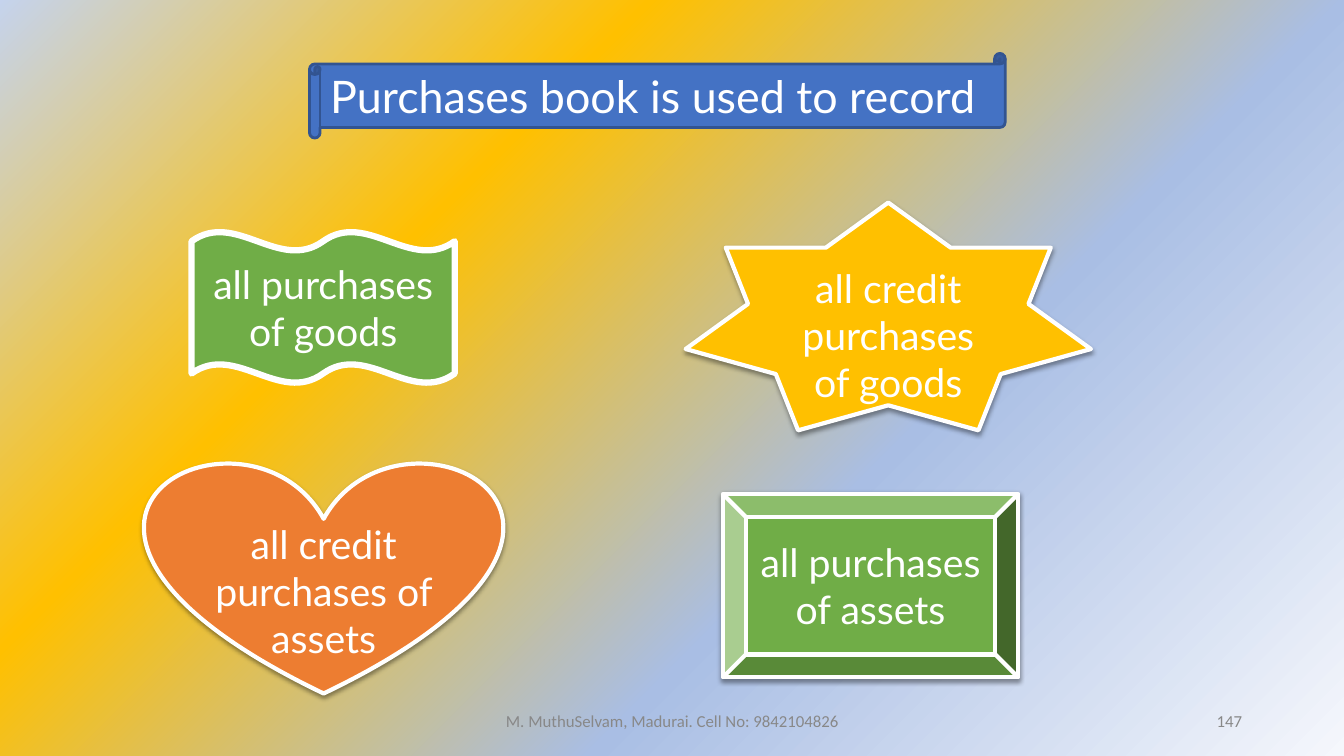
from pptx import Presentation
from pptx.dml.color import RGBColor
from pptx.enum.shapes import MSO_SHAPE as Kind
from pptx.enum.text import MSO_ANCHOR as Anchor, MSO_AUTO_SIZE as Fit, PP_ALIGN as Align
from pptx.oxml import parse_xml
from pptx.util import Inches, Pt

NS = 'xmlns:a="http://schemas.openxmlformats.org/drawingml/2006/main"'
WIDE, HIGH = 13.33, 7.5
WHITE, GREEN, GREY = "FFFFFF", "70AD47", "888888"
STOPS = [(0, "F5F7FC"), (36, "A9BEE4"), (69, "FFC000"), (100, "C5D3ED")]
LINE_GAP = 0.47  # height of one line of answer text

# kind, fill, outline width, shadow, lines the text is lowered by, box, words
ANSWERS = [
    (Kind.HEART, "ED7D31", 3, True, 1, (1.44, 4.57, 3.54, 2.31),
     "all credit purchases of assets"),
    (Kind.STAR_7_POINT, "FFC000", 3, True, 1, (6.8, 2.01, 4.02, 2.26),
     "all credit purchases of goods"),
    (Kind.BEVEL, GREEN, 3, True, 0, (7.17, 4.9, 2.93, 1.82),
     "all purchases of assets"),
    (Kind.DOUBLE_WAVE, GREEN, 4.5, False, 0, (1.9, 2.3, 2.61, 1.5),
     "all purchases of goods"),
]


def color(code):
    return RGBColor.from_string(code)


def write(shape, words, size, code, align, font="Lato"):
    frame = shape.text_frame
    frame.word_wrap = True
    frame.auto_size = Fit.NONE
    frame.vertical_anchor = Anchor.MIDDLE
    para = frame.paragraphs[0]
    para.alignment = align
    run = para.add_run()
    run.text = words
    run.font.size = Pt(size)
    run.font.name = font
    run.font.color.rgb = color(code)


def draw(slide, kind, box, fill, edge, width):
    shape = slide.shapes.add_shape(kind, *map(Inches, box))
    shape.shadow.inherit = False
    shape.fill.solid()
    shape.fill.fore_color.rgb = color(fill)
    shape.line.color.rgb = color(edge)
    shape.line.width = Pt(width)
    return shape


def shade(shape):
    """Give the shape a soft shadow below it."""
    effects = shape.shadow._element.find(
        "{http://schemas.openxmlformats.org/drawingml/2006/main}effectLst")
    effects.append(parse_xml(
        f'<a:outerShdw {NS} blurRad="40000" dist="20000" dir="5400000" rotWithShape="0">'
        '<a:srgbClr val="000000"><a:alpha val="38000"/></a:srgbClr></a:outerShdw>'))


def paint(slide):
    """Fill the background with a gradient out of the lower right corner."""
    fill = slide.background.fill
    fill.gradient()
    stops = "".join(f'<a:gs pos="{pos * 1000}"><a:srgbClr val="{code}"/></a:gs>'
                    for pos, code in STOPS)
    new = parse_xml(
        f'<a:gradFill {NS} rotWithShape="1"><a:gsLst>{stops}</a:gsLst>'
        '<a:path path="circle"><a:fillToRect l="100000" t="100000"/></a:path>'
        '<a:tileRect r="-100000" b="-100000"/></a:gradFill>')
    old = slide.background._cSld.bg.bgPr[0]
    old.getparent().replace(old, new)


def banner(slide, box):
    left, top, width, height = box
    scroll = draw(slide, Kind.HORIZONTAL_SCROLL, box, "4472C4", "325491", 2)
    title = slide.shapes.title
    roll = height / 8
    title.left, title.top = Inches(left + roll), Inches(top)
    title.width, title.height = Inches(width - roll), Inches(height)
    scroll._element.addnext(title._element)
    write(title, "Purchases book is used to record", 32, WHITE, Align.LEFT)


def answer(slide, kind, fill, width, shadow, drop, box, words):
    shape = draw(slide, kind, box, fill, WHITE, width)
    if shadow:
        shade(shape)
    write(shape, words, 28, WHITE, Align.CENTER)
    shape.text_frame.margin_top = Inches(0.05 + drop * LINE_GAP)


def footer(slide, top, height):
    for left, width, align, words in (
            (4.42, 4.5, Align.CENTER, "M. MuthuSelvam, Madurai. Cell No: 9842104826"),
            (9.42, 3, Align.RIGHT, "147")):
        box = slide.shapes.add_textbox(*map(Inches, (left, top, width, height)))
        write(box, words, 12, GREY, align, "Calibri")


def main():
    deck = Presentation()
    deck.slide_width, deck.slide_height = Inches(WIDE), Inches(HIGH)
    slide = deck.slides.add_slide(deck.slide_layouts[5])
    paint(slide)
    for item in ANSWERS:
        answer(slide, *item)
    banner(slide, (3.07, 0.53, 6.9, 0.84))
    footer(slide, 6.95, 0.4)
    deck.save("out.pptx")


if __name__ == "__main__":
    main()
